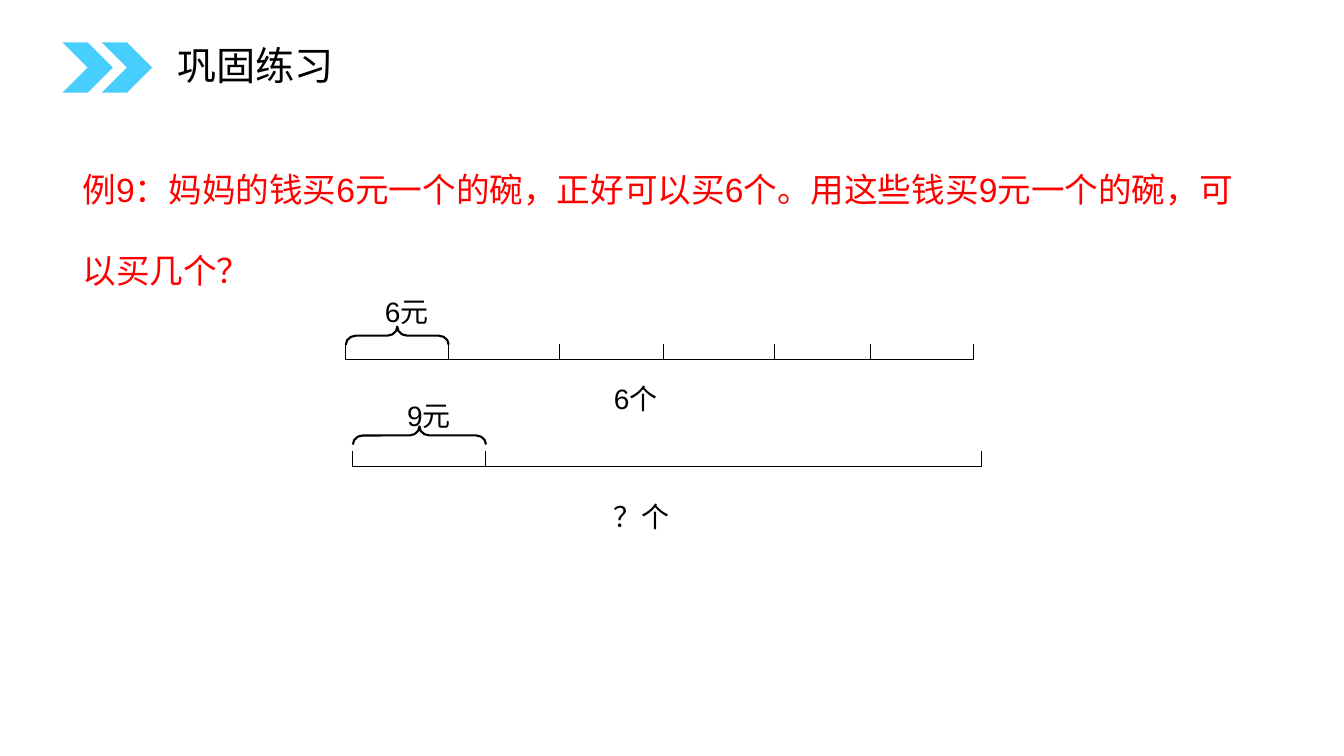
from lxml import etree
from pptx import Presentation
from pptx.dml.color import RGBColor
from pptx.enum import shapes as kinds, text as txt
from pptx.oxml import ns
from pptx.util import Inches, Pt

BLACK, RED, SKY = "000000", "FF0000", "48CEFC"
TICK = 0.16
BRACE_DEPTH = 0.18


def colour(hex_code):
    """Turn a hex string into a colour."""
    return RGBColor.from_string(hex_code)


def write(frame, words, size, hex_code):
    """Fill a text frame with one left-aligned paragraph and return it."""
    frame.word_wrap = True
    frame.text = words
    paragraph = frame.paragraphs[0]
    paragraph.alignment = txt.PP_ALIGN.LEFT
    font = paragraph.runs[0].font
    font.name, font.size = "Arial", Pt(size)
    font.color.rgb = colour(hex_code)
    return paragraph


def add_words(parts, left, top, width, height, words, size, hex_code=BLACK):
    """Add a text box and return its paragraph."""
    box = parts.add_textbox(*map(Inches, (left, top, width, height)))
    return write(box.text_frame, words, size, hex_code)


def add_line(parts, x1, y1, x2, y2):
    """Add a thin black line without a shadow."""
    line = parts.add_connector(
        kinds.MSO_CONNECTOR.STRAIGHT, *map(Inches, (x1, y1, x2, y2)))
    line.line.color.rgb = colour(BLACK)
    line.line.width = Pt(0.75)
    etree.SubElement(line._element.spPr, ns.qn("a:effectLst"))


def add_brace(parts, left, top, span):
    """Add a brace that opens downwards over the given span."""
    brace = parts.add_shape(
        kinds.MSO_SHAPE.LEFT_BRACE,
        Inches(left + (span - BRACE_DEPTH) / 2),
        Inches(top - (span - BRACE_DEPTH) / 2),
        Inches(BRACE_DEPTH), Inches(span))
    brace.rotation = 90
    brace.adjustments[0] = 0.546
    brace.shadow.inherit = False
    brace.fill.background()
    brace.line.color.rgb = colour(BLACK)
    brace.line.width = Pt(1.5)


def add_heading(slide, left, top, size):
    """Place the two chevrons and the slide title beside them."""
    for step in range(2):
        chevron = slide.shapes.add_shape(
            kinds.MSO_SHAPE.CHEVRON, Inches(left + step * 0.39), Inches(top),
            Inches(size), Inches(size))
        chevron.shadow.inherit = False
        chevron.fill.solid()
        chevron.fill.fore_color.rgb = colour(SKY)
        chevron.line.fill.background()
    title = slide.shapes.title
    title.left, title.top = Inches(left + 1.04), Inches(top + 0.02)
    title.width, title.height = Inches(5.59), Inches(0.46)
    frame = title.text_frame
    frame.auto_size = txt.MSO_AUTO_SIZE.NONE
    frame.vertical_anchor = txt.MSO_ANCHOR.MIDDLE
    paragraph = write(frame, "巩固练习", 28, BLACK)
    paragraph.line_spacing = 0.9
    paragraph.space_before = Pt(10)


def add_question(slide, left, top, width, height):
    """Place the red exercise text."""
    question = "例9：妈妈的钱买6元一个的碗，正好可以买6个。用这些钱买9元一个的碗，可以买几个？"
    paragraph = add_words(slide.shapes, left, top, width, height, question, 24, RED)
    paragraph.line_spacing = 2.0


def add_bar(slide, left, base, length, ticks, brace_top, price, price_at, count, count_top):
    """Draw a segment bar whose first part is braced with its price."""
    parts = slide.shapes.add_group_shape().shapes
    add_line(parts, left, base, left + length, base)
    for offset in (0, *ticks, length):
        add_line(parts, left + offset, base - TICK, left + offset, base)
    add_brace(parts, left, brace_top, ticks[0])
    add_words(parts, *price_at, 1.03, 0.43, price, 20)
    add_words(parts, 5.99, count_top, 2.75, 0.43, count, 20)


def main():
    """Build the practice slide and save it."""
    deck = Presentation()
    deck.slide_width, deck.slide_height = Inches(13.33), Inches(7.5)
    slide = deck.slides.add_slide(deck.slide_layouts[5])
    add_heading(slide, 0.62, 0.42, 0.5)
    add_question(slide, 0.72, 1.23, 11.88, 1.72)
    add_bar(slide, 3.43, 3.57, 6.23, (1.02, 2.12, 3.15, 4.25, 5.2), 3.24,
            "6元", (3.72, 2.87), "6个", 3.74)
    add_bar(slide, 3.5, 4.63, 6.23, (1.32,), 4.23,
            "9元", (3.94, 3.9), "？个", 4.91)
    deck.save("out.pptx")


if __name__ == "__main__":
    main()
